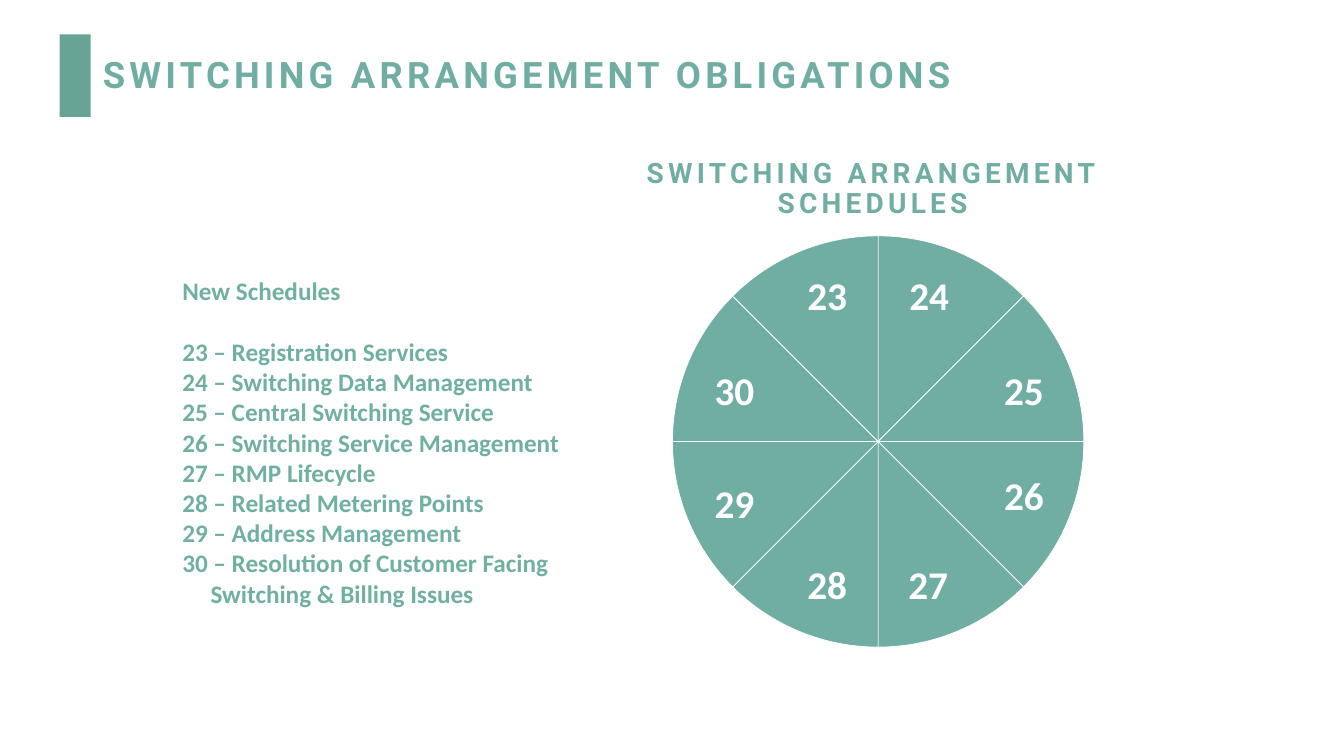
from math import cos, radians, sin

from pptx import Presentation
from pptx.dml.color import RGBColor
from pptx.enum.shapes import MSO_SHAPE
from pptx.enum.text import MSO_ANCHOR, MSO_AUTO_SIZE, PP_ALIGN
from pptx.util import Inches, Pt

TEAL = RGBColor(0x70, 0xAD, 0xA3)
LIST_TEAL = RGBColor(0x70, 0xB0, 0xA3)
BAR_TEAL = RGBColor(0x68, 0xA4, 0x95)
WHITE = RGBColor(0xFF, 0xFF, 0xFF)

SCHEDULES = [
    "23 – Registration Services",
    "24 – Switching Data Management",
    "25 – Central Switching Service",
    "26 – Switching Service Management",
    "27 – RMP Lifecycle",
    "28 – Related Metering Points",
    "29 – Address Management",
    "30 – Resolution of Customer Facing Switching & Billing Issues",
]
WHEEL_CENTRE = (8.71, 4.38)
WHEEL_RADIUS = 2.04
WEDGE_ANGLE = 45
LABEL_SIZE = (0.51, 0.35)
LABEL_POSITIONS = {
    "23": (7.95, 2.75), "24": (8.96, 2.75),
    "25": (9.9, 3.69), "26": (9.9, 4.73),
    "27": (8.95, 5.62), "28": (7.95, 5.62),
    "29": (7.03, 4.81), "30": (7.03, 3.69),
}


class ScheduleSlide:
    heading_font = "Roboto"
    body_font = "Calibri"

    def __init__(self, presentation):
        self.slide = presentation.slides.add_slide(presentation.slide_layouts[5])
        self.shapes = self.slide.shapes

    def style(self, paragraph, font_name, size, color, align=PP_ALIGN.LEFT):
        paragraph.alignment = align
        for run in paragraph.runs:
            run.font.name = font_name
            run.font.size = Pt(size)
            run.font.bold = True
            run.font.color.rgb = color

    def heading(self, holder, text, size, align):
        """Write letter-spaced heading text into a placeholder or text box."""
        frame = holder.text_frame
        frame.text = text
        frame.word_wrap = True
        frame.auto_size = MSO_AUTO_SIZE.NONE
        paragraph = frame.paragraphs[0]
        paragraph.line_spacing = 0.9
        self.style(paragraph, self.heading_font, size, TEAL, align)
        for run in paragraph.runs:
            run.font._element.set("spc", "300")

    def title(self, text, left, top, width, height):
        title = self.shapes.title
        title.left, title.top = Inches(left), Inches(top)
        title.width, title.height = Inches(width), Inches(height)
        self.heading(title, text, 26, PP_ALIGN.LEFT)
        title.text_frame.vertical_anchor = MSO_ANCHOR.MIDDLE

    def text_box(self, left, top, width, height):
        return self.shapes.add_textbox(
            Inches(left), Inches(top), Inches(width), Inches(height))

    def block(self, left, top, width, height, color):
        block = self.shapes.add_shape(
            MSO_SHAPE.RECTANGLE, Inches(left), Inches(top), Inches(width), Inches(height))
        block.shadow.inherit = False
        block.fill.solid()
        block.fill.fore_color.rgb = color
        block.line.fill.background()
        return block

    def schedule_list(self, heading, schedules, left, top, width, height):
        frame = self.text_box(left, top, width, height).text_frame
        frame.word_wrap = True
        frame.text = heading
        for schedule in schedules:
            paragraph = frame.add_paragraph()
            paragraph.text = schedule
            properties = paragraph._p.get_or_add_pPr()
            properties.set("marL", str(Inches(0.28)))
            properties.set("indent", str(-Inches(0.28)))
        frame.paragraphs[1].space_before = Pt(22)
        for paragraph in frame.paragraphs:
            self.style(paragraph, self.body_font, 18, LIST_TEAL)

    def wedge(self, start_angle):
        """Draw one wheel sector, clockwise from start_angle (0 is the top)."""
        center_x, center_y = WHEEL_CENTRE
        arc = [
            (Inches(center_x + WHEEL_RADIUS * sin(radians(angle))),
             Inches(center_y - WHEEL_RADIUS * cos(radians(angle))))
            for angle in range(start_angle, start_angle + WEDGE_ANGLE + 1)
        ]
        builder = self.shapes.build_freeform(Inches(center_x), Inches(center_y))
        builder.add_line_segments(arc, close=True)
        wedge = builder.convert_to_shape()
        wedge.shadow.inherit = False
        wedge.fill.solid()
        wedge.fill.fore_color.rgb = TEAL
        wedge.line.color.rgb = WHITE
        wedge.line.width = Pt(0.5)

    def wedge_label(self, number, left, top):
        frame = self.block(left, top, *LABEL_SIZE, TEAL).text_frame
        frame.margin_left = frame.margin_right = Inches(0.05)
        frame.margin_top = frame.margin_bottom = Inches(0.05)
        frame.vertical_anchor = MSO_ANCHOR.MIDDLE
        frame.text = number
        self.style(frame.paragraphs[0], self.body_font, 28, WHITE, PP_ALIGN.CENTER)


def main():
    presentation = Presentation()
    presentation.slide_width = Inches(13.33)
    presentation.slide_height = Inches(7.5)

    page = ScheduleSlide(presentation)
    page.block(0.59, 0.34, 0.31, 0.82, BAR_TEAL)
    page.title("SWITCHING ARRANGEMENT OBLIGATIONS", 0.92, 0.4, 10.15, 0.72)
    page.schedule_list("New Schedules", SCHEDULES, 1.71, 2.68, 3.94, 3.74)
    for start_angle in range(0, 360, WEDGE_ANGLE):
        page.wedge(start_angle)
    for number, position in LABEL_POSITIONS.items():
        page.wedge_label(number, *position)
    wheel_heading = page.text_box(5.79, 1.53, 5.73, 0.71)
    page.heading(wheel_heading, "SWITCHING ARRANGEMENT SCHEDULES", 20, PP_ALIGN.CENTER)

    presentation.save("out.pptx")


if __name__ == "__main__":
    main()
